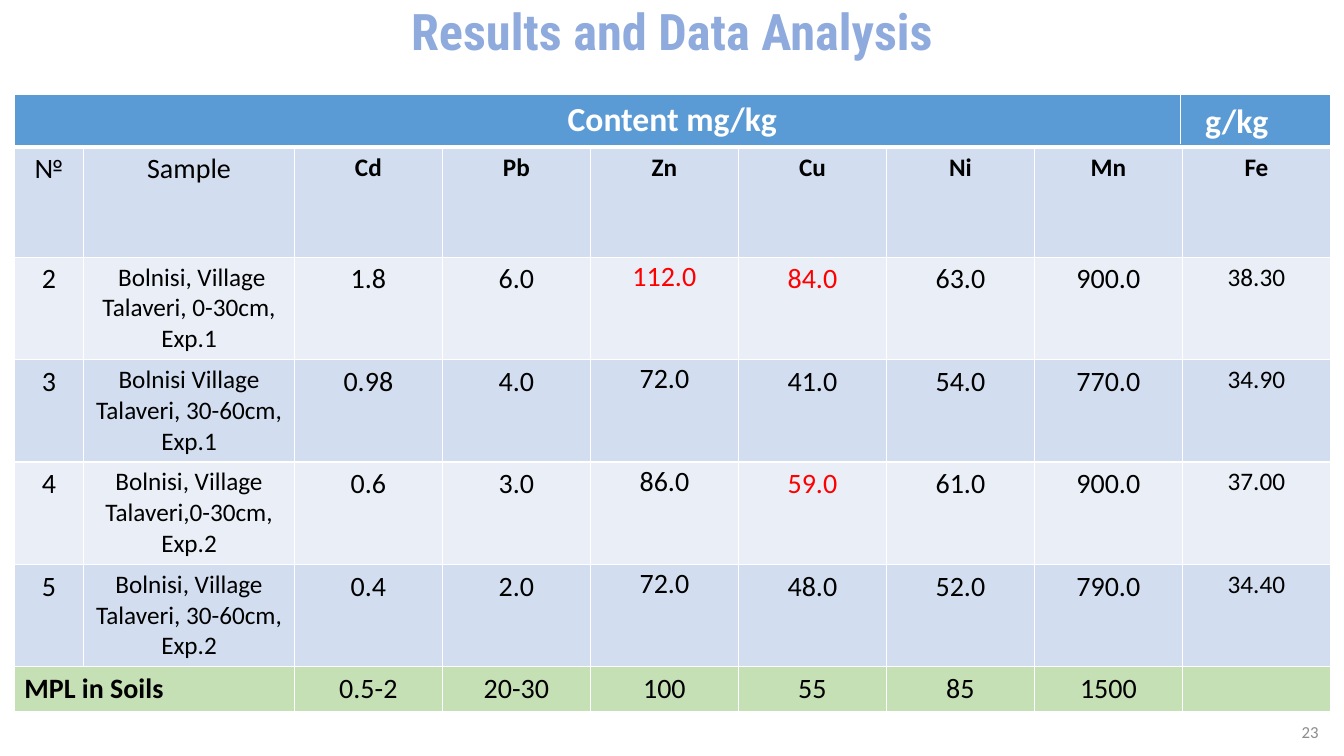
from lxml import etree
from pptx import Presentation
from pptx.dml.color import RGBColor
from pptx.enum.shapes import MSO_CONNECTOR
from pptx.enum.text import MSO_ANCHOR, MSO_AUTO_SIZE, PP_ALIGN
from pptx.oxml.ns import qn
from pptx.util import Cm, Pt

LEFT, CENTER, RIGHT = PP_ALIGN.LEFT, PP_ALIGN.CENTER, PP_ALIGN.RIGHT
TOP, MIDDLE, BOTTOM = MSO_ANCHOR.TOP, MSO_ANCHOR.MIDDLE, MSO_ANCHOR.BOTTOM
NO_FIT = MSO_AUTO_SIZE.NONE
STRAIGHT = MSO_CONNECTOR.STRAIGHT

COLORS = {
    "title": "8FAADC", "white": "FFFFFF", "black": "000000", "red": "FF0000",
    "header": "5B9BD5", "band": "D2DEEF", "light": "EAEFF7",
    "limit": "C5E0B4", "number": "8C8C8C",
}
COL_WIDTHS = [1.75, 5.31] + [3.73] * 7
ROW_HEIGHTS = [1.32, 2.77, 1.98, 1.98, 1.98, 2.29, 1.02]
ELEMENTS = ["№", "Sample", "Cd", "Pb", "Zn", "Cu", "Ni", "Mn", "Fe"]
SAMPLES = [
    ["2", " Bolnisi, Village\nTalaveri, 0-30cm, Exp.1",
     "1.8", "6.0", "112.0", "84.0", "63.0", "900.0", "38.30"],
    ["3", "Bolnisi Village Talaveri, 30-60cm, Exp.1",
     "0.98", "4.0", "72.0", "41.0", "54.0", "770.0", "34.90"],
    ["4", "Bolnisi, Village Talaveri,0-30cm, Exp.2",
     "0.6", "3.0", "86.0", "59.0", "61.0", "900.0", "37.00"],
    ["5", "Bolnisi, Village Talaveri, 30-60cm,\nExp.2",
     "0.4", "2.0", "72.0", "48.0", "52.0", "790.0", "34.40"],
]
LIMITS = ["MPL in Soils", "", "0.5-2", "20-30", "100", "55", "85", "1500", ""]
EXCEEDED = {"112.0", "84.0", "59.0"}
SAMPLE_COL, ZN_COL, FE_COL = 1, 4, 8


class SlideBuilder:
    """Holds the style and the current slide, and adds elements to it."""

    def __init__(self, prs):
        self.font = "Calibri"
        self.slide = prs.slides.add_slide(prs.slide_layouts[5])

    def add_runs(self, tf, text, size, color, bold=False, align=CENTER,
                 font=None, spacing=None):
        for i, line in enumerate(text.split("\n")):
            p = tf.add_paragraph() if i else tf.paragraphs[0]
            p.alignment = align
            if spacing:
                p.line_spacing = spacing
            r = p.add_run()
            r.text = line
            r.font.name = font or self.font
            r.font.size = Pt(size)
            r.font.bold = bold
            r.font.color.rgb = RGBColor.from_string(COLORS[color])

    def title(self, text, width, height):
        sp = self.slide.shapes.title
        sp.left, sp.top, sp.width, sp.height = 0, 0, Cm(width), Cm(height)
        tf = sp.text_frame
        tf.auto_size = NO_FIT
        tf.vertical_anchor = BOTTOM
        self.add_runs(tf, text, 36, "title", True, font="Roboto Condensed",
                      spacing=0.9)

    def text(self, text, x, y, w, h, size, color, bold=False, align=LEFT,
             anchor=TOP):
        sp = self.slide.shapes.add_textbox(Cm(x), Cm(y), Cm(w), Cm(h))
        tf = sp.text_frame
        tf.word_wrap = True
        tf.vertical_anchor = anchor
        self.add_runs(tf, text, size, color, bold, align)

    def line(self, x1, y1, x2, y2, color, width):
        c = self.slide.shapes.add_connector(STRAIGHT, Cm(x1), Cm(y1),
                                            Cm(x2), Cm(y2))
        c.line.color.rgb = RGBColor.from_string(COLORS[color])
        c.line.width = Pt(width)
        etree.SubElement(c._element.spPr, qn("a:effectLst"))

    def table(self, x, y, w, h, col_widths, row_heights):
        frame = self.slide.shapes.add_table(
            len(row_heights), len(col_widths), Cm(x), Cm(y), Cm(w), Cm(h))
        for col, width in zip(frame.table.columns, col_widths):
            col.width = Cm(width)
        for row, height in zip(frame.table.rows, row_heights):
            row.height = Cm(height)
        frame.height = Cm(h)
        return frame.table

    def borders(self, cell, top=1, bottom=1):
        tc_pr = cell._tc.get_or_add_tcPr()
        for side, width in (("L", 1), ("R", 1), ("T", top), ("B", bottom)):
            ln = etree.SubElement(tc_pr, qn(f"a:ln{side}"), w=str(Pt(width)))
            fill = etree.SubElement(ln, qn("a:solidFill"))
            etree.SubElement(fill, qn("a:srgbClr"), val=COLORS["white"])

    def row(self, table, index, texts, fill, style, top=1, bottom=1):
        for col, text in enumerate(texts):
            cell = table.cell(index, col)
            self.borders(cell, top, bottom)
            cell.fill.solid()
            cell.fill.fore_color.rgb = RGBColor.from_string(COLORS[fill])
            if text:
                self.add_runs(cell.text_frame, text, **style(cell, col, text))


def header_style(cell, col, text):
    return {"size": 24, "color": "white", "bold": True}


def element_style(cell, col, text):
    symbol = col > SAMPLE_COL
    return {"size": 18 if symbol else 20, "color": "black", "bold": symbol}


def sample_style(cell, col, text):
    style = {"size": 18 if col in (SAMPLE_COL, FE_COL) else 20,
             "color": "red" if text in EXCEEDED else "black"}
    if col == ZN_COL:
        cell.margin_left = cell.margin_right = Cm(0.18)
        cell.margin_top = cell.margin_bottom = 0
        style["spacing"] = 1.07
    return style


def limit_style(cell, col, text):
    return {"size": 20, "color": "black", "bold": col == 0,
            "align": CENTER if col else LEFT}


def main():
    prs = Presentation()
    prs.slide_width, prs.slide_height = Cm(33.87), Cm(19.05)
    s = SlideBuilder(prs)
    s.title("Results and Data Analysis", 33.87, 1.68)

    table = s.table(0.36, 2.39, 33.15, 15.37, COL_WIDTHS, ROW_HEIGHTS)
    header = ["Content mg/kg"] + [""] * FE_COL
    s.row(table, 0, header, "header", header_style, bottom=3)
    s.row(table, 1, ELEMENTS, "band", element_style, top=3)
    for i, sample in enumerate(SAMPLES):
        s.row(table, i + 2, sample, "band" if i % 2 else "light", sample_style)
    last = len(ROW_HEIGHTS) - 1
    s.row(table, last, LIMITS, "limit", limit_style)
    table.cell(0, 0).merge(table.cell(0, FE_COL))
    table.cell(last, 0).merge(table.cell(last, SAMPLE_COL))

    s.line(29.74, 3.63, 29.74, 2.39, "white", 0.5)
    s.text("g/kg", 30.12, 2.39, 3.35, 1.27, 24, "white", True)
    s.text("23", 25.86, 17.93, 7.62, 1.02, 12, "number", align=RIGHT,
           anchor=MIDDLE)
    prs.save("out.pptx")


if __name__ == "__main__":
    main()
